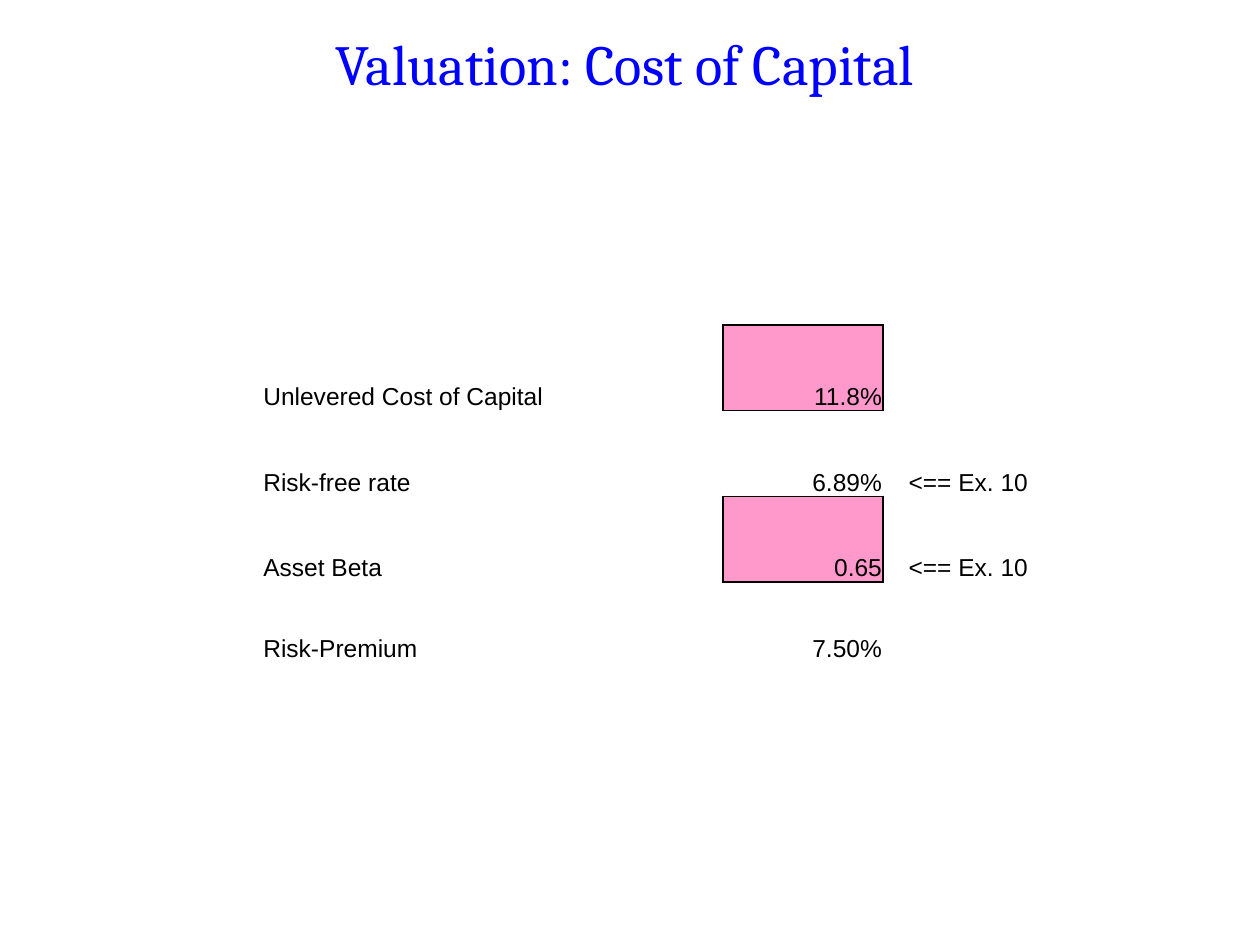
from lxml import etree
from pptx import Presentation
from pptx.dml.color import RGBColor
from pptx.enum.text import MSO_ANCHOR, PP_ALIGN
from pptx.oxml.ns import qn
from pptx.util import Inches, Pt

LEFT, MID, RIGHT = PP_ALIGN.LEFT, PP_ALIGN.CENTER, PP_ALIGN.RIGHT
BOTTOM = MSO_ANCHOR.BOTTOM

# Content
TITLE = "Valuation: Cost of Capital"
ROWS = [
    ("Unlevered Cost of Capital", "11.8%", ""),
    ("Risk-free rate", "6.89%", "<== Ex. 10"),
    ("Asset Beta", "0.65", "<== Ex. 10"),
    ("Risk-Premium", "7.50%", ""),
]
BOXED = {(0, 1), (2, 1)}  # row, column of the framed results
WIDTHS = [3.66, 1.27, 1.16]
HEIGHTS = [0.68, 0.68, 0.68, 0.64]
ALIGNS = [LEFT, RIGHT, RIGHT]
SIDES = {"lnL": (0, -1), "lnR": (0, 1), "lnT": (-1, 0), "lnB": (1, 0)}
PINK, BLACK, BLUE = "FF99CC", "000000", "0000FF"


def color(code):
    return RGBColor.from_string(code)


def write(frame, text, size=14, font="Arial", fill=BLACK, align=LEFT):
    para = frame.paragraphs[0]
    para.alignment = align
    run = para.add_run()
    run.text = text
    run.font.size = Pt(size)
    run.font.name = font
    run.font.color.rgb = color(fill)


def border(cell, side, code):
    props = cell._tc.get_or_add_tcPr()
    line = etree.SubElement(props, qn("a:" + side), w=str(Pt(1)))
    if code:
        fill = etree.SubElement(line, qn("a:solidFill"))
        etree.SubElement(fill, qn("a:srgbClr"), val=code)
    else:
        etree.SubElement(line, qn("a:noFill"))


deck = Presentation()
deck.slide_width, deck.slide_height = Inches(10), Inches(7.5)
slide = deck.slides.add_slide(deck.slide_layouts[6])

# Title
box = slide.shapes.add_textbox(Inches(0.25), Inches(0.33), Inches(9.42), Inches(0.5))
frame = box.text_frame
frame.word_wrap = True
frame.vertical_anchor = BOTTOM
frame.margin_left = frame.margin_right = Inches(0.12)
frame.margin_top = frame.margin_bottom = Inches(0.06)
write(frame, TITLE, size=32.4, font="Cambria", fill=BLUE, align=MID)

# Table grid
table = slide.shapes.add_table(
    len(ROWS), len(WIDTHS), Inches(2.08), Inches(2.58),
    Inches(sum(WIDTHS)), Inches(sum(HEIGHTS))).table
table.first_row = table.horz_banding = False
for col, width in zip(table.columns, WIDTHS):
    col.width = Inches(width)
for row, height in zip(table.rows, HEIGHTS):
    row.height = Inches(height)

# Cells: an edge is drawn where either neighbour is boxed
for r, texts in enumerate(ROWS):
    for c, text in enumerate(texts):
        cell = table.cell(r, c)
        cell.vertical_anchor = BOTTOM
        cell.margin_left = cell.margin_right = cell.margin_top = Inches(0.01)
        cell.margin_bottom = 0
        for side, (down, over) in SIDES.items():
            edge = BOXED & {(r, c), (r + down, c + over)}
            border(cell, side, BLACK if edge else None)
        if (r, c) in BOXED:
            cell.fill.solid()
            cell.fill.fore_color.rgb = color(PINK)
        else:
            cell.fill.background()
        if text:
            write(cell.text_frame, text, align=ALIGNS[c])

deck.save("out.pptx")
